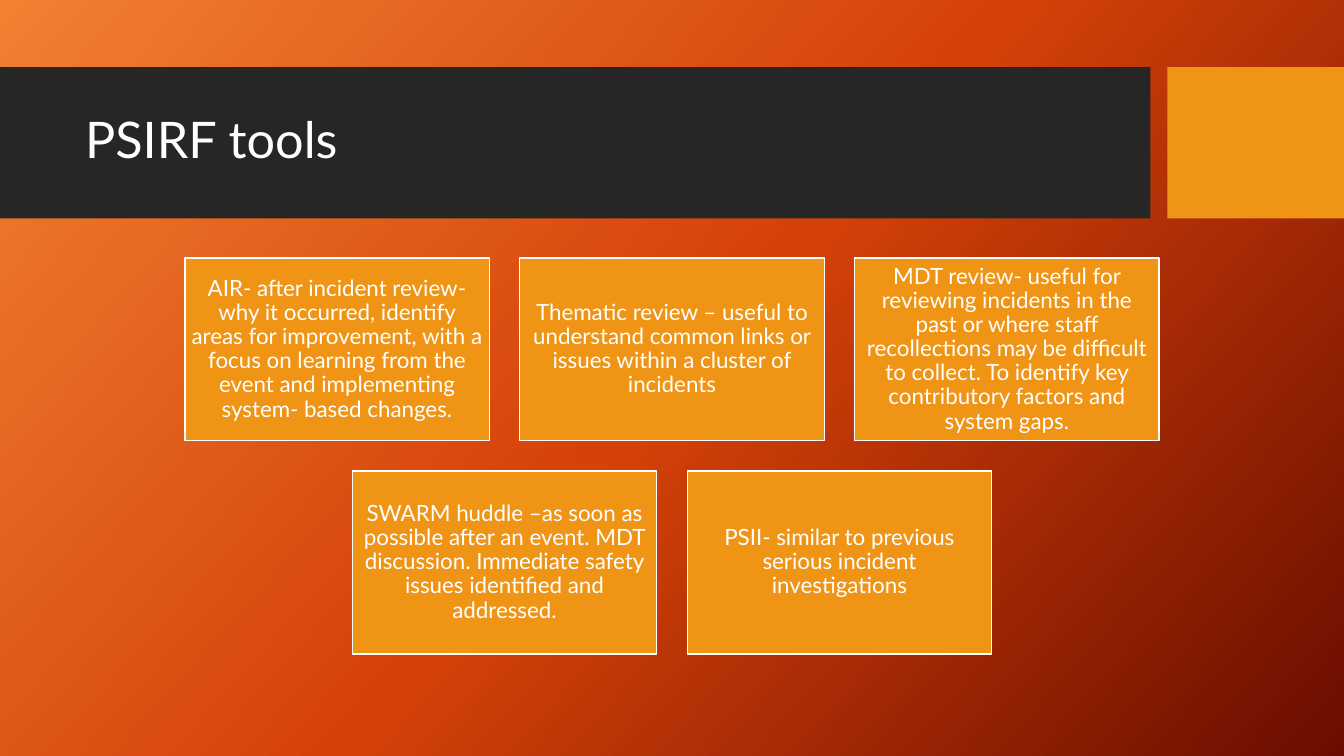
from copy import deepcopy
from dataclasses import dataclass

from pptx import Presentation
from pptx import util as u
from pptx.dml.color import RGBColor
from pptx.enum import shapes, text
from pptx.oxml.ns import qn


@dataclass(frozen=True)
class Theme:
    font: str = "Lato"
    white: str = "FFFFFF"
    band: str = "262626"
    accent: str = "F09415"
    gradient: tuple = ((0, "F18031"), (0.5, "D54209"), (1, "6A0D00"))
    gradient_angle: int = 318
    title_size: int = 36
    card_size: int = 16


SLIDE_WIDTH, SLIDE_HEIGHT = 960, 540
CARD_WIDTH, CARD_HEIGHT, CARD_GAP = 217.5, 130.5, 21.75
CARDS_TOP = 184.3
TOOL_ROWS = (
    (
        "AIR- after incident review- why it occurred, identify areas for improvement, "
        "with a focus on learning from the event and implementing system- based changes.",
        "Thematic review – useful to understand common links or issues within a cluster "
        "of incidents",
        "MDT review- useful for reviewing incidents in the past or where staff "
        "recollections may be difficult to collect. To identify key contributory factors "
        "and system gaps.",
    ),
    (
        "SWARM huddle –as soon as possible after an event. MDT discussion. Immediate "
        "safety issues identified and addressed.",
        "PSII- similar to previous serious incident investigations",
    ),
)


def write_text(shape, words, *, font, size, color, align, inset_x, inset_y):
    frame = shape.text_frame
    frame.word_wrap = True
    frame.auto_size = text.MSO_AUTO_SIZE.NONE
    frame.vertical_anchor = text.MSO_ANCHOR.MIDDLE
    frame.margin_left = frame.margin_right = u.Pt(inset_x)
    frame.margin_top = frame.margin_bottom = u.Pt(inset_y)
    paragraph = frame.paragraphs[0]
    paragraph.text = words
    paragraph.alignment = align
    paragraph.line_spacing = 0.9
    paragraph.space_before = u.Pt(0)
    paragraph.font.name = font
    paragraph.font.size = u.Pt(size)
    paragraph.font.color.rgb = RGBColor.from_string(color)


class SlideBuilder:
    def __init__(self, slide, theme):
        self.slide = slide
        self.theme = theme

    def background(self):
        fill = self.slide.background.fill
        fill.gradient()
        fill.gradient_angle = self.theme.gradient_angle
        stop_list = self.slide.element.find(".//" + qn("a:gsLst"))
        stop_list.append(deepcopy(stop_list[-1]))
        for stop, (position, color) in zip(fill.gradient_stops, self.theme.gradient):
            stop.position = position
            stop.color.rgb = RGBColor.from_string(color)

    def rectangle(self, left, top, width, height, color, outline=None):
        shape = self.slide.shapes.add_shape(
            shapes.MSO_SHAPE.RECTANGLE, u.Pt(left), u.Pt(top), u.Pt(width), u.Pt(height)
        )
        shape.shadow.inherit = False
        shape.fill.solid()
        shape.fill.fore_color.rgb = RGBColor.from_string(color)
        if outline:
            shape.line.color.rgb = RGBColor.from_string(outline)
            shape.line.width = u.Pt(1)
        else:
            shape.line.fill.background()
        return shape

    def title(self, words, left, top, width, height):
        title = self.slide.shapes.title
        title.left, title.top = u.Pt(left), u.Pt(top)
        title.width, title.height = u.Pt(width), u.Pt(height)
        write_text(
            title, words, font=self.theme.font, size=self.theme.title_size,
            color=self.theme.white, align=text.PP_ALIGN.LEFT, inset_x=7.2, inset_y=3.6,
        )
        self.slide.shapes.element.append(title.element)

    def card(self, words, left, top):
        card = self.rectangle(
            left, top, CARD_WIDTH, CARD_HEIGHT, self.theme.accent, self.theme.white
        )
        write_text(
            card, words, font=self.theme.font, size=self.theme.card_size,
            color=self.theme.white, align=text.PP_ALIGN.CENTER, inset_x=4.8, inset_y=4.8,
        )

    def card_row(self, tools, top):
        pitch = CARD_WIDTH + CARD_GAP
        left = (SLIDE_WIDTH - len(tools) * pitch + CARD_GAP) / 2
        for column, words in enumerate(tools):
            self.card(words, left + column * pitch, top)


def main():
    presentation = Presentation()
    presentation.slide_width = u.Pt(SLIDE_WIDTH)
    presentation.slide_height = u.Pt(SLIDE_HEIGHT)
    theme = Theme()
    title_only = presentation.slide_layouts.get_by_name("Title Only")
    builder = SlideBuilder(presentation.slides.add_slide(title_only), theme)
    builder.background()
    builder.rectangle(0, 48, 821.8, 108, theme.band)
    builder.rectangle(833.8, 48, 126.2, 108, theme.accent)
    builder.title("PSIRF tools", 53.6, 58.8, 756.7, 85)
    for row, tools in enumerate(TOOL_ROWS):
        builder.card_row(tools, CARDS_TOP + row * (CARD_HEIGHT + CARD_GAP))
    presentation.save("out.pptx")


if __name__ == "__main__":
    main()
